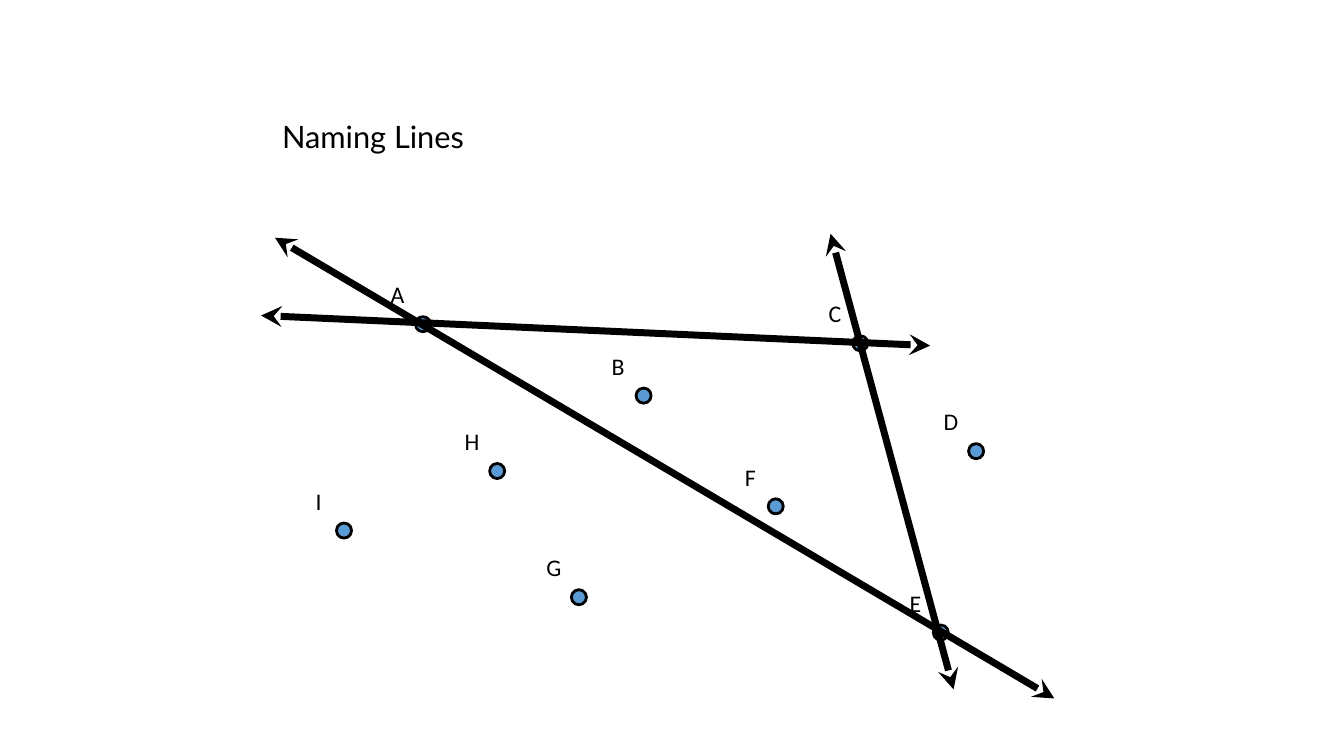
from lxml import etree
from pptx import Presentation
from pptx.dml.color import RGBColor
from pptx.enum.shapes import MSO_CONNECTOR, MSO_SHAPE
from pptx.enum.text import MSO_AUTO_SIZE, PP_ALIGN
from pptx.oxml.ns import qn
from pptx.util import Cm, Pt

STRAIGHT = MSO_CONNECTOR.STRAIGHT
OVAL = MSO_SHAPE.OVAL
LEFT, CENTER = PP_ALIGN.LEFT, PP_ALIGN.CENTER
FIT_SHAPE = MSO_AUTO_SIZE.SHAPE_TO_FIT_TEXT
BLACK = RGBColor(0x00, 0x00, 0x00)
BLUE = RGBColor(0x5B, 0x9B, 0xD5)

# Content: lengths in centimetres
TITLE = "Naming Lines"
POINTS = {  # name: centre of the dot
    "A": (10.66, 8.17),
    "I": (8.67, 13.37),
    "H": (12.53, 11.87),
    "G": (14.59, 15.05),
    "B": (16.22, 9.97),
    "C": (21.68, 8.65),
    "F": (19.55, 12.76),
    "D": (24.6, 11.37),
    "E": (23.71, 15.94),
}
LINES = [  # both arrow tips of lines CA, CE and EA
    ((23.44, 8.71), (6.58, 7.95)),
    ((20.93, 5.89), (24.03, 17.37)),
    ((26.57, 17.6), (6.93, 5.99)),
]
DOT = 0.38
LABEL_W, LABEL_H = 0.36, 0.74
LABEL_LEFT, LABEL_UP = 0.64, 1.11  # from dot centre to label centre and top

prs = Presentation()
prs.slide_width, prs.slide_height = Cm(33.87), Cm(19.05)
slide = prs.slides.add_slide(prs.slide_layouts[6])
shapes = slide.shapes


def add_text(text, x, y, w, h, font, size, align, wrap):
    frame = shapes.add_textbox(Cm(x), Cm(y), Cm(w), Cm(h)).text_frame
    frame.margin_left = frame.margin_right = 0
    frame.margin_top = frame.margin_bottom = 0
    frame.word_wrap = wrap
    if not wrap:
        frame.auto_size = FIT_SHAPE
    paragraph = frame.paragraphs[0]
    paragraph.alignment = align
    run = paragraph.add_run()
    run.text = text
    run.font.name, run.font.size = font, Pt(size)
    run.font.color.rgb = BLACK


def add_point(name, x, y):
    dot = shapes.add_shape(OVAL, Cm(x - DOT / 2), Cm(y - DOT / 2), Cm(DOT), Cm(DOT))
    dot.shadow.inherit = False
    dot.fill.solid()
    dot.fill.fore_color.rgb = BLUE
    dot.line.color.rgb = BLACK
    dot.line.width = Pt(2)
    add_text(name, x - LABEL_LEFT - LABEL_W / 2, y - LABEL_UP,
             LABEL_W, LABEL_H, "Calibri", 17, CENTER, False)


def add_line(start, end):
    line = shapes.add_connector(STRAIGHT, *(Cm(v) for v in start + end))
    line.line.color.rgb = BLACK
    line.line.width = Pt(5)
    outline = line.line._get_or_add_ln()
    for tag in ("a:headEnd", "a:tailEnd"):
        etree.SubElement(outline, qn(tag)).set("type", "stealth")
    etree.SubElement(line._element.spPr, qn("a:effectLst"))


# Title
add_text(TITLE, 7.11, 2.97, 18.54, 1.22, "Lato", 22, LEFT, True)

# Named points
for name, centre in POINTS.items():
    add_point(name, *centre)

# Lines through the points
for start, end in LINES:
    add_line(start, end)

prs.save("out.pptx")
